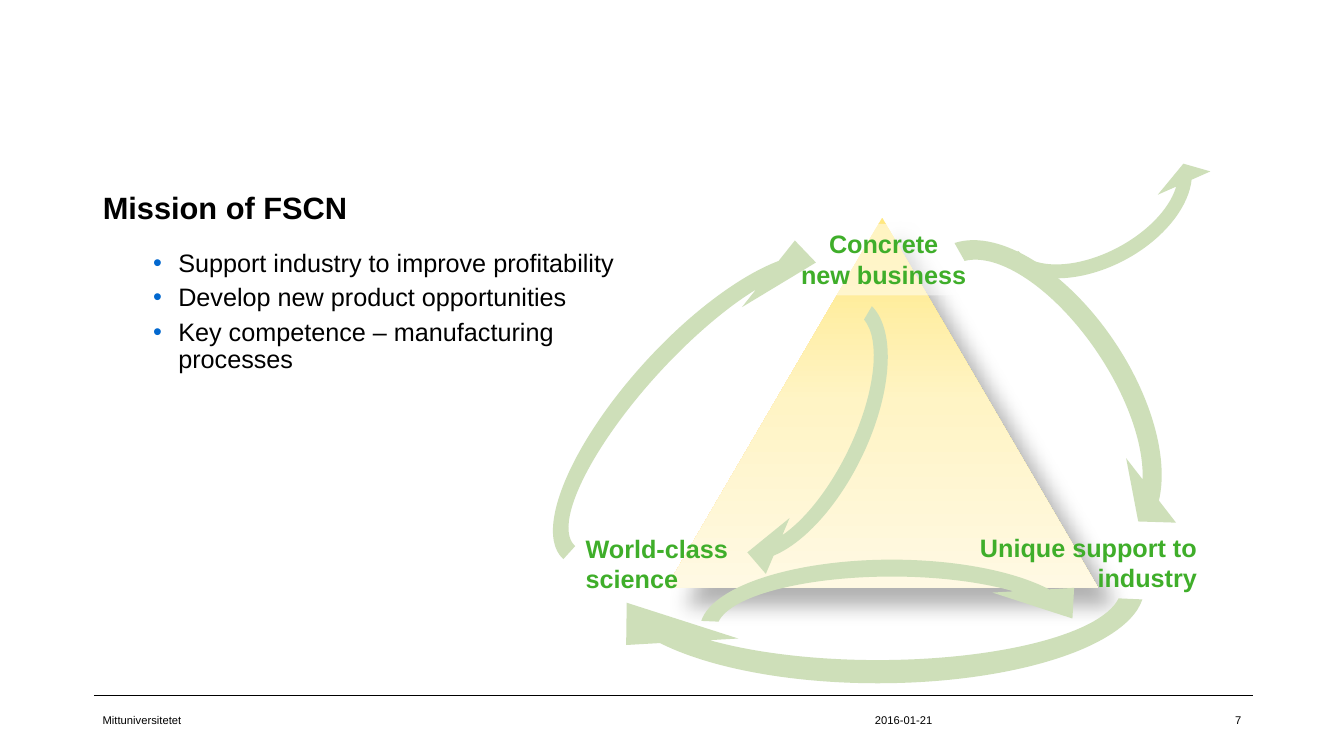
from lxml import etree
from pptx import Presentation
from pptx.dml.color import RGBColor
from pptx.enum.shapes import MSO_CONNECTOR, MSO_SHAPE
from pptx.enum.text import MSO_ANCHOR, PP_ALIGN
from pptx.oxml import parse_xml
from pptx.oxml.ns import nsdecls, qn
from pptx.util import Inches, Pt

BLACK = RGBColor(0x00, 0x00, 0x00)
WHITE = RGBColor(0xFF, 0xFF, 0xFF)
GREEN = RGBColor(0x3F, 0xAE, 0x2A)
PALE_GREEN = RGBColor(0xCE, 0xDF, 0xB9)


def write(shape, lines, size, color, bold=False, align=PP_ALIGN.LEFT, anchor=MSO_ANCHOR.TOP):
    frame = shape.text_frame
    frame.word_wrap = True
    frame.vertical_anchor = anchor
    frame.text = "\n".join(lines)
    for paragraph in frame.paragraphs:
        paragraph.alignment = align
        paragraph.font.name = "Arial"
        paragraph.font.size = Pt(size)
        paragraph.font.bold = bold
        paragraph.font.color.rgb = color


def add_plain_shape(shapes, kind, box, color):
    shape = shapes.add_shape(kind, *map(Inches, box))
    shape.shadow.inherit = False
    shape.line.fill.background()
    shape.fill.solid()
    shape.fill.fore_color.rgb = color
    return shape


prs = Presentation()
prs.slide_width = Inches(13.33)
prs.slide_height = Inches(7.5)
slide = prs.slides.add_slide(prs.slide_layouts[5])

# Footer rule
rule = slide.shapes.add_connector(
    MSO_CONNECTOR.STRAIGHT, Inches(0.93), Inches(6.9), Inches(12.43), Inches(6.9))
rule.line.color.rgb = BLACK
rule.line.width = Pt(0.25)
etree.SubElement(rule._element.spPr, qn("a:effectLst"))

# Title
title = slide.shapes.title
title.left, title.top, title.width, title.height = map(Inches, (0.92, 1.69, 11.5, 0.71))
write(title, ["Mission of FSCN"], 22, BLACK, bold=True)
title.text_frame.paragraphs[0].line_spacing = Pt(36)

# Mission points
points = slide.shapes.add_textbox(*map(Inches, (0.92, 2.44, 5.67, 4.31)))
write(points, [
    "Support industry to improve profitability",
    "Develop new product opportunities",
    "Key competence – manufacturing processes",
], 18, BLACK)
for index, point in enumerate(points.text_frame.paragraphs):
    point.line_spacing = 0.9
    if index:
        point.space_before = Pt(5)
    properties = point._p.get_or_add_pPr()
    properties.set("marL", str(Inches(0.75)))
    properties.set("indent", str(Inches(-0.25)))
    bullet = [
        f'<a:buClr {nsdecls("a")}><a:srgbClr val="0268CF"/></a:buClr>',
        f'<a:buFont {nsdecls("a")} typeface="Arial"/>',
        f'<a:buChar {nsdecls("a")} char="•"/>',
    ]
    for part in bullet:
        properties.find(qn("a:defRPr")).addprevious(parse_xml(part))

# Triangle with gradient and soft shadow
diagram = slide.shapes.add_group_shape().shapes
triangle = add_plain_shape(
    diagram, MSO_SHAPE.ISOSCELES_TRIANGLE, (6.61, 2.16, 4.28, 3.67), WHITE)
stops = "".join(
    f'<a:gs pos="{position * 1000}"><a:srgbClr val="{color}"/></a:gs>'
    for position, color in [(0, "FFE880"), (50, "FFF4C5"), (100, "FFF9E3")])
triangle_props = triangle._element.spPr
triangle_props.replace(triangle_props.find(qn("a:solidFill")), parse_xml(
    f'<a:gradFill {nsdecls("a")} rotWithShape="1"><a:gsLst>{stops}</a:gsLst>'
    '<a:lin ang="5400000" scaled="0"/></a:gradFill>'))
triangle_props.find(qn("a:effectLst")).append(parse_xml(
    f'<a:outerShdw {nsdecls("a")} blurRad="{Pt(15)}" dist="{Pt(18)}" dir="2700000" '
    'algn="tl" rotWithShape="0"><a:srgbClr val="000000"><a:alpha val="30000"/>'
    '</a:srgbClr></a:outerShdw>'))

# Corner labels
business = add_plain_shape(diagram, MSO_SHAPE.RECTANGLE, (7.05, 2.22, 3.43, 0.71), WHITE)
white_fill = business._element.spPr.find(qn("a:solidFill"))[0]
etree.SubElement(white_fill, qn("a:alpha")).set("val", "51000")
write(business, ["Concrete", "new business"], 18, GREEN, bold=True, align=PP_ALIGN.CENTER)

for label, box, align in [
    ("Unique support to industry", (8.78, 5.23, 3.19, 0.71), PP_ALIGN.RIGHT),
    ("World-class science", (5.71, 5.24, 2.22, 0.71), PP_ALIGN.LEFT),
]:
    corner = diagram.add_textbox(*map(Inches, box))
    write(corner, [label], 18, GREEN, bold=True, align=align)

# Arrows: box, rotation, head angle, start angle, head width, flipped
for box, rotation, head_angle, start_angle, head_width, flipped in [
    ((4.6, 3.02, 4.66, 2.1), 312.4, 6.814, 107.914, 0.201, False),
    ((8.28, 2.69, 4.05, 2.42), 56.3, 6.794, 110.595, 0.167, False),
    ((5.62, 4.45, 6.17, 2.77), 180, 7.206, 109.455, 0.201, False),
    ((9.6, 1.16, 2.51, 1.71), 332.1, 6.794, 110.595, 0.167, True),
    ((6.62, 5.23, 4.45, 2.02), 0, 7.206, 109.455, 0.201, False),
    ((6.29, 3.35, 3.29, 1.8), 116.1, 7.352, 110.595, 0.167, False),
]:
    arrow = add_plain_shape(diagram, MSO_SHAPE.CIRCULAR_ARROW, box, PALE_GREEN)
    arrow.rotation = rotation
    for index, value in enumerate([0.083, head_angle, 206.805, start_angle, head_width]):
        arrow.adjustments[index] = value
    if flipped:
        arrow._element.spPr.find(qn("a:xfrm")).set("flipV", "1")

# Footer texts
for text, left, width, align in [
    ("Mittuniversitetet", 0.92, 3, PP_ALIGN.LEFT),
    ("2016-01-21", 8.58, 1.67, PP_ALIGN.LEFT),
    ("7", 10.74, 1.67, PP_ALIGN.RIGHT),
]:
    footer = slide.shapes.add_textbox(*map(Inches, (left, 6.95, width, 0.39)))
    write(footer, [text], 8, BLACK, align=align, anchor=MSO_ANCHOR.MIDDLE)

prs.save("out.pptx")
